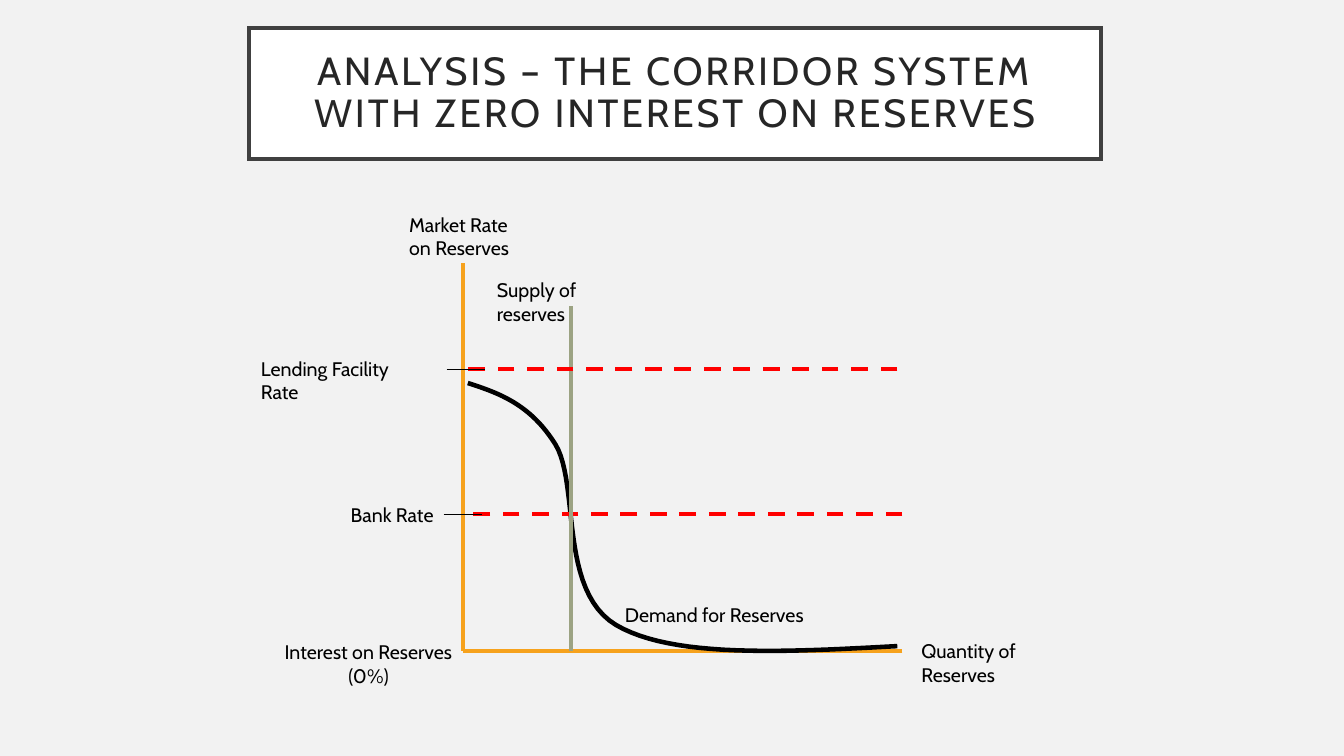
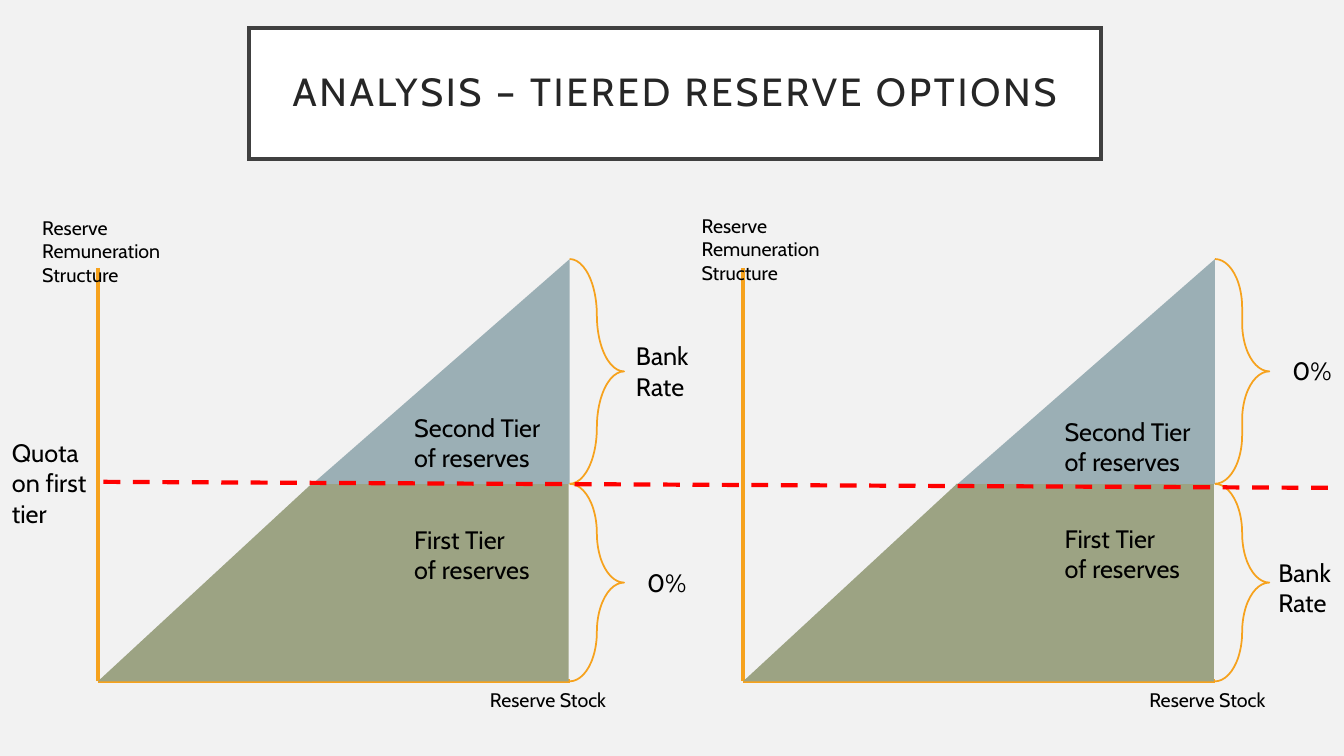
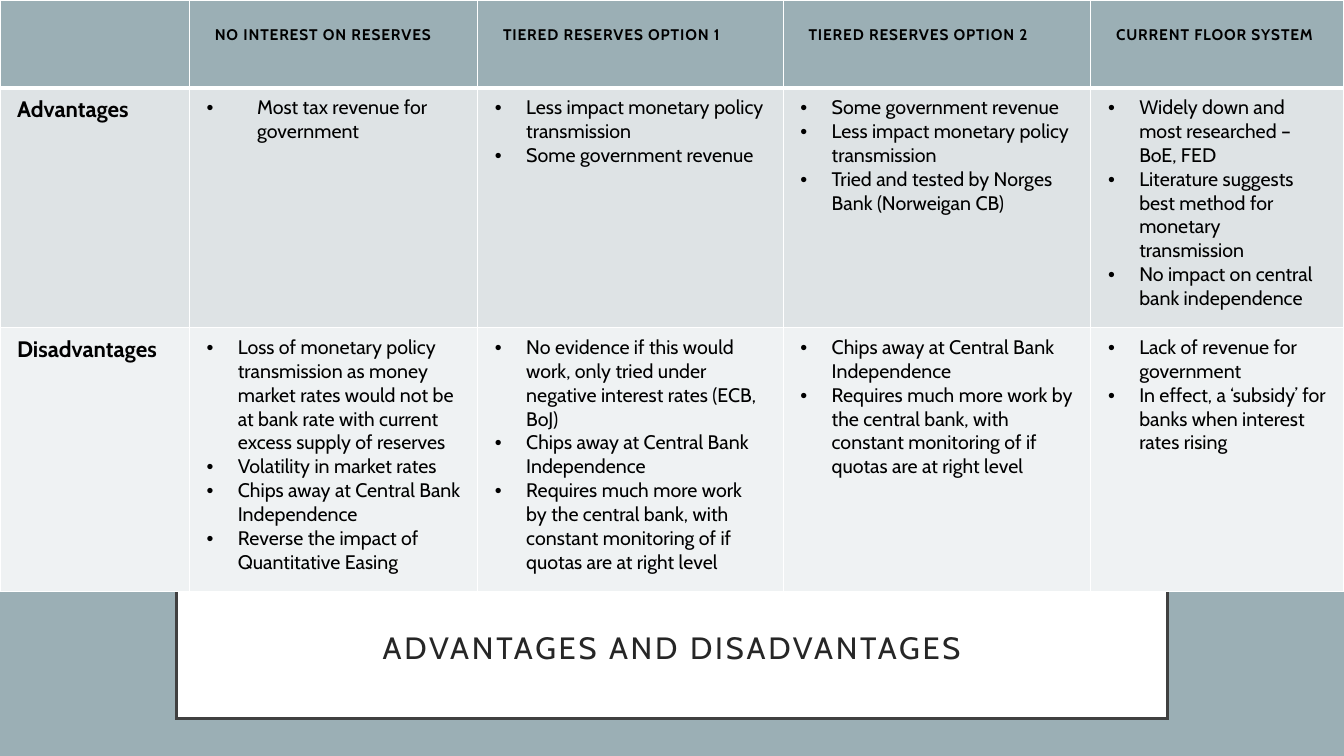
from lxml import etree
from pptx import Presentation
from pptx.dml.color import RGBColor
from pptx.enum.dml import MSO_LINE_DASH_STYLE as DASH
from pptx.enum.shapes import MSO_CONNECTOR, MSO_SHAPE as SHAPE
from pptx.enum.text import MSO_ANCHOR, MSO_AUTO_SIZE, PP_ALIGN
from pptx.oxml.ns import qn
from pptx.util import Inches, Pt

FONT = "Cabin"
COLORS = {
    "paper": "F2F2F2", "white": "FFFFFF", "black": "000000", "frame": "404040",
    "title": "262626", "axis": "F6A21D", "limit": "FF0000",
    "green": "9CA383", "blue": "9BAFB5", "row1": "DEE3E5", "row2": "EFF2F3",
}


def rgb(name):
    return RGBColor.from_string(COLORS[name])


# Shared elements
def new_slide(prs, background):
    s = prs.slides.add_slide(prs.slide_layouts[6])
    s.background.fill.solid()
    s.background.fill.fore_color.rgb = rgb(background)
    return s


def style_runs(p, size, color="black", bold=False, spacing=0):
    for r in p.runs:
        r.font.name, r.font.size, r.font.bold = FONT, Pt(size), bold
        r.font.color.rgb = rgb(color)
        if spacing:
            r._r.get_or_add_rPr().set("spc", str(int(spacing * 100)))


def set_margins(target, left, top, right, bottom):
    target.margin_left, target.margin_top = Inches(left), Inches(top)
    target.margin_right, target.margin_bottom = Inches(right), Inches(bottom)


def paint(sp, fill=None, line=None, width=1):
    sp.shadow.inherit = False
    if fill:
        sp.fill.solid()
        sp.fill.fore_color.rgb = rgb(fill)
    else:
        sp.fill.background()
    if line:
        sp.line.color.rgb = rgb(line)
        sp.line.width = Pt(width)
    else:
        sp.line.fill.background()


def add_box(s, kind, x, y, w, h, **look):
    sp = s.shapes.add_shape(kind, Inches(x), Inches(y), Inches(w), Inches(h))
    paint(sp, **look)
    return sp


def add_title(s, text, box=(2.47, 0.28, 8.45, 1.3), size=28, side=0.2):
    sp = add_box(s, SHAPE.RECTANGLE, *box, fill="white", line="frame", width=2.5)
    ln = sp._element.spPr.find(qn("a:ln"))
    etree.SubElement(ln, qn("a:miter")).set("lim", "800000")
    tf = sp.text_frame
    tf.word_wrap = True
    tf.vertical_anchor = MSO_ANCHOR.MIDDLE
    set_margins(tf, side, 0.2, side, 0.2)
    tf.text = text
    p = tf.paragraphs[0]
    p.alignment, p.line_spacing = PP_ALIGN.CENTER, 0.9
    style_runs(p, size, "title", spacing=2)


def add_label(s, text, x, y, w, h, size=14, align=PP_ALIGN.LEFT):
    sp = s.shapes.add_textbox(Inches(x), Inches(y), Inches(w), Inches(h))
    tf = sp.text_frame
    tf.word_wrap = True
    tf.auto_size = MSO_AUTO_SIZE.SHAPE_TO_FIT_TEXT
    tf.text = text
    for p in tf.paragraphs:
        p.alignment = align
        style_runs(p, size)


def add_line(s, x1, y1, x2, y2, color, width=3, dash=None):
    c = s.shapes.add_connector(MSO_CONNECTOR.STRAIGHT, Inches(x1), Inches(y1),
                               Inches(x2), Inches(y2))
    c.line.color.rgb = rgb(color)
    c.line.width = Pt(width)
    if dash:
        c.line.dash_style = dash
    etree.SubElement(c._element.spPr, qn("a:effectLst"))


def add_axes(s, left, top, right, bottom):
    add_line(s, left, top, left, bottom, "axis")
    add_line(s, right, bottom, left, bottom, "axis")


# Corridor diagram
def bezier(a, b, c, d, steps=24):
    for i in range(1, steps + 1):
        t = i / steps
        u = 1 - t
        yield tuple(u**3 * k + 3 * u * u * t * m + 3 * u * t * t * n + t**3 * o
                    for k, m, n, o in zip(a, b, c, d))


def add_curve(s, start, segments, color, width):
    points, last = [start], start
    for segment in segments:
        points.extend(bezier(last, *segment))
        last = segment[-1]
    # The builder rounds to whole units, so the points are given in EMU
    points = [(Inches(x), Inches(y)) for x, y in points]
    builder = s.shapes.build_freeform(*points[0])
    builder.add_line_segments(points[1:], close=False)
    paint(builder.convert_to_shape(), line=color, width=width)


def corridor_slide(prs):
    s = new_slide(prs, "paper")
    add_title(s, "ANALYSIS – THE CORRIDOR SYSTEM WITH ZERO INTEREST ON RESERVES")
    lending, bank, floor = 3.66, 5.1, 6.46
    add_axes(s, 4.59, 2.61, 8.95, floor)
    add_curve(s, (4.64, 3.8), [
        ((4.95, 3.9), (5.26, 4.01), (5.51, 4.41)),
        ((5.75, 4.81), (5.54, 5.86), (6.11, 6.2)),
        ((6.67, 6.53), (7.78, 6.47), (8.9, 6.41)),
    ], "black", 3.25)
    add_line(s, 8.95, bank, 4.59, bank, "limit", dash=DASH.DASH)
    add_line(s, 5.66, floor, 5.66, 3.04, "green")
    add_line(s, 8.9, lending, 4.53, lending, "limit", dash=DASH.DASH)
    for x, y in ((4.4, bank), (4.43, lending)):
        add_line(s, x, y, x + 0.38, y, "black", 0.5)
    for label in (
        ("Supply of reserves", 4.83, 2.71, 1.66, 0.34),
        ("Lending Facility Rate", 2.49, 3.49, 1.87, 0.34),
        ("Bank Rate", 3.38, 4.94, 1.06, 0.34),
        ("Market Rate on Reserves", 3.96, 2.06, 1.26, 0.57),
        ("Quantity of Reserves", 9.04, 6.29, 1.87, 0.34),
        ("Demand for Reserves", 6.1, 5.93, 2.36, 0.34),
    ):
        add_label(s, *label)
    add_label(s, "Interest on Reserves\n(0%)", 2.72, 6.3, 1.87, 0.57,
              align=PP_ALIGN.CENTER)


# Tier diagrams
def add_slope(s, x, y, w, h, fill):
    """Right triangle rising to the right, filling the given area."""
    sp = add_box(s, SHAPE.RIGHT_TRIANGLE, x + (w - h) / 2, y + (h - w) / 2, h, w,
                 fill=fill)
    sp.rotation = 270


def add_brace(s, x, y, h, curl):
    sp = add_box(s, SHAPE.RIGHT_BRACE, x, y, 0.54, h, line="axis", width=1.25)
    sp.adjustments[0] = curl


def add_tiers(s, left, upper_curl):
    top, quota, bottom = 2.57, 4.8, 6.76
    bend, right = left + 2.12, left + 4.68
    add_axes(s, left, 2.66, right, bottom)
    add_slope(s, left, quota, 2.12, bottom - quota, "green")
    add_box(s, SHAPE.RECTANGLE, bend - 0.01, quota, 2.56, bottom - quota,
            fill="green")
    add_slope(s, bend + 0.01, top, 2.55, quota - top, "blue")
    add_brace(s, right, quota, bottom - quota, 0.913)
    add_brace(s, right, top, quota - top, upper_curl)


def tiered_slide(prs):
    s = new_slide(prs, "paper")
    add_title(s, "ANALYSIS – TIERED RESERVE OPTIONS")
    add_tiers(s, 0.97, 1.039)
    add_tiers(s, 7.37, 0.893)
    for label in (
        ("0%", 6.32, 5.58, 0.81, 0.4),
        ("Bank Rate", 6.21, 3.33, 0.73, 0.71),
        ("Bank Rate", 12.58, 5.48, 0.81, 0.71),
        ("0%", 12.72, 3.48, 0.73, 0.4),
        ("Quota on first tier", 0.02, 4.29, 0.99, 1.01),
    ):
        add_label(s, *label, size=18)
    for x, first_y, second_y in ((4.01, 5.15, 4.04), (10.46, 5.14, 4.08)):
        add_label(s, "First Tier\nof reserves", x, first_y, 1.38, 0.71, 18)
        add_label(s, "Second Tier\nof reserves", x, second_y, 1.5, 0.71, 18)
    for x, y in ((0.32, 2.09), (6.86, 2.07)):
        add_label(s, "Reserve Remuneration Structure", x, y, 2.02, 0.57)
        add_label(s, "Reserve Stock", x + 4.44, 6.78, 1.42, 0.34)
    add_line(s, 13.17, 4.84, 0.99, 4.78, "limit", dash=DASH.DASH)


# Comparison table
HEADERS = ["", "NO INTEREST ON RESERVES", "TIERED RESERVES OPTION 1",
           "TIERED RESERVES OPTION 2", "CURRENT FLOOR SYSTEM"]
CHIPS = "Chips away at Central Bank Independence"
WORK = ("Requires much more work by the central bank, with constant monitoring "
        "of if quotas are at right level")
REVENUE = "Some government revenue"
IMPACT = "Less impact monetary policy transmission"
ROWS = [
    ("Advantages", "row1", [
        ["Most tax revenue for government"],
        [IMPACT, REVENUE],
        [REVENUE, IMPACT, "Tried and tested by Norges Bank (Norweigan CB)"],
        ["Widely down and most researched – BoE, FED",
         "Literature suggests best method for monetary transmission",
         "No impact on central bank independence"],
    ]),
    ("Disadvantages", "row2", [
        ["Loss of monetary policy transmission as money market rates would not be "
         "at bank rate with current excess supply of reserves",
         "Volatility in market rates", CHIPS,
         "Reverse the impact of Quantitative Easing"],
        ["No evidence if this would work, only tried under negative interest rates "
         "(ECB, BoJ)", CHIPS, WORK],
        [CHIPS, WORK],
        ["Lack of revenue for government",
         "In effect, a ‘subsidy’ for banks when interest rates rising"],
    ]),
]


def add_bullet(p, indent):
    pPr = p._p.get_or_add_pPr()
    pPr.set("marL", str(Inches(indent)))
    pPr.set("indent", str(-Inches(indent)))
    etree.SubElement(pPr, qn("a:buFont")).set("typeface", "Arial")
    etree.SubElement(pPr, qn("a:buChar")).set("char", "•")


def set_borders(cell, bottom=1):
    tcPr = cell._tc.get_or_add_tcPr()
    for i, (side, width) in enumerate(zip("LRTB", (1, 1, 1, bottom))):
        ln = etree.Element(qn(f"a:ln{side}"), w=str(Pt(width)))
        fill = etree.SubElement(ln, qn("a:solidFill"))
        etree.SubElement(fill, qn("a:srgbClr")).set("val", COLORS["white"])
        tcPr.insert(i, ln)


def fill_cell(cell, lines, fill, size, margins, bold=False, spacing=0,
              indent=0, bottom=1):
    cell.fill.solid()
    cell.fill.fore_color.rgb = rgb(fill)
    set_borders(cell, bottom)
    set_margins(cell, *margins)
    cell.text_frame.text = "\n".join(lines)
    for p in cell.text_frame.paragraphs:
        if indent:
            add_bullet(p, indent)
        style_runs(p, size, bold=bold, spacing=spacing)


def add_comparison(s):
    widths, heights = (1.88, 2.86, 3.03, 3.05, 2.51), (0.87, 1.9, 2.6)
    table = s.shapes.add_table(len(heights), len(widths), 0, 0, Inches(13.33),
                               Inches(sum(heights))).table
    for column, w in zip(table.columns, widths):
        column.width = Inches(w)
    for row, h in zip(table.rows, heights):
        row.height = Inches(h)
    for j, text in enumerate(HEADERS):
        fill_cell(table.cell(0, j), [text], "blue", 11, (0.25,) * 4,
                  bold=True, spacing=0.6, bottom=3)
    margins = (0.17, 0.08, 0.17, 0.17)
    for i, (name, fill, columns) in enumerate(ROWS, 1):
        fill_cell(table.cell(i, 0), [name], fill, 16, margins, bold=True)
        for j, lines in enumerate(columns, 1):
            indent = 0.5 if (i, j) == (1, 1) else 0.31
            fill_cell(table.cell(i, j), lines, fill, 14, margins, indent=indent)


def comparison_slide(prs):
    s = new_slide(prs, "white")
    add_box(s, SHAPE.RECTANGLE, 0, 5.38, 13.33, 2.12, fill="blue")
    add_title(s, "ADVANTAGES AND DISADVANTAGES", (1.75, 5.75, 9.83, 1.38), 22, 0.3)
    add_comparison(s)


def main():
    prs = Presentation()
    prs.slide_width, prs.slide_height = Inches(13.33), Inches(7.5)
    corridor_slide(prs)
    tiered_slide(prs)
    comparison_slide(prs)
    prs.save("out.pptx")


if __name__ == "__main__":
    main()
